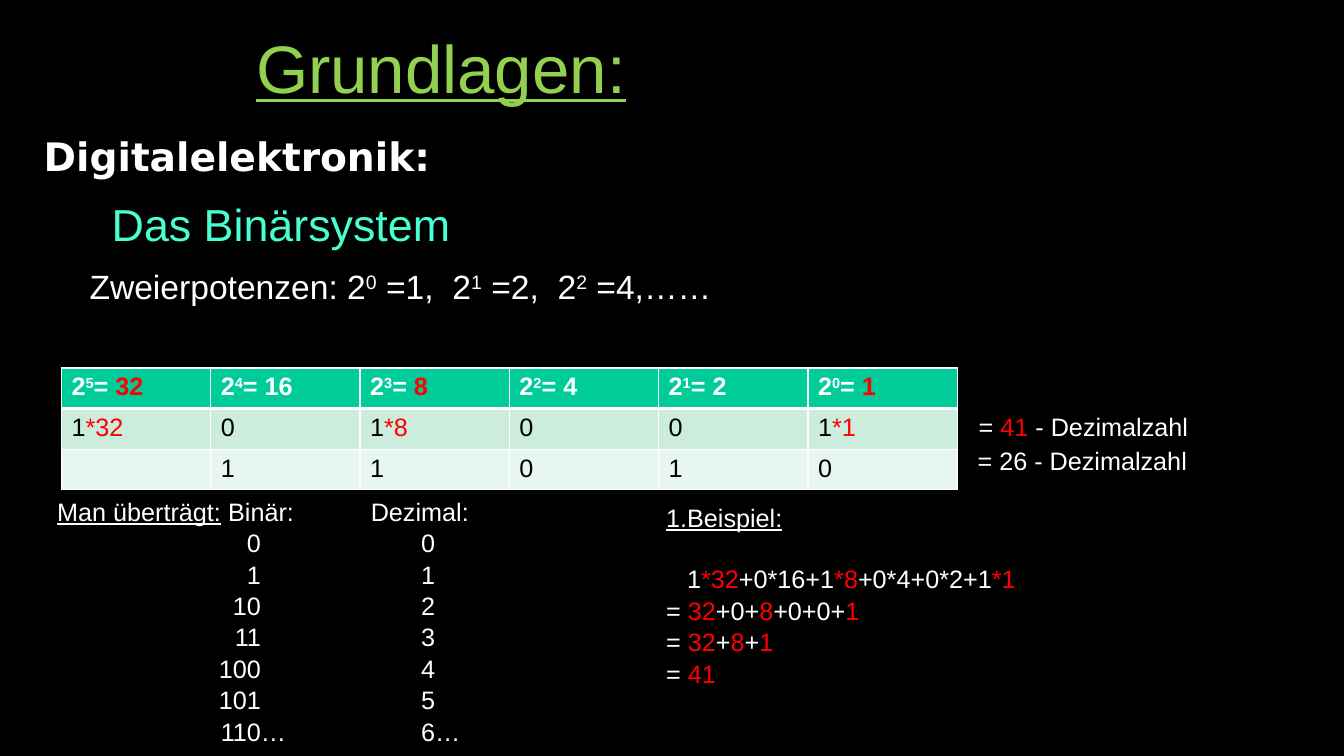
from pptx import Presentation, util as u
from pptx.dml.color import RGBColor
from pptx.enum import text as t
from pptx.oxml import parse_xml
from pptx.oxml.ns import nsdecls

Pt = u.Pt


class Theme:
    font, head = "Arial", "DejaVu Sans"
    back, ink, dark, red = "000000", "FFFFFF", "000000", "FF0000"
    lime, mint = "92D050", "47FFD1"
    fills = ["00CC99", "CCECDE", "E7F6EF"]
    title, topic, sub, powers, body = 48, 28, 32, 24, 18


# Run styles: R red, S superscript, U underlined; a plain string has none.
R, S, U = "R", "S", "U"

TITLE = [("Grundlagen:", U)]
TOPIC = ["Digitalelektronik:"]
SUB = ["Das Binärsystem"]
POWERS = ["Zweierpotenzen: 2", ("0", S), " =1,  2", ("1", S),
          " =2,  2", ("2", S), " =4,……"]
RED_COLS = (0, 2, 5)
BITS = ["100101", "11010"]
BITS = ["101001", " 11010"]
SUMS = [
    (692, 289.4, ["=", (" 41 ", R), "- Dezimalzahl"]),
    (691.2, 313.9, ["= 26 - Dezimalzahl"]),
]
LIST_HEAD = [("Man überträgt:", U), " Binär:\tDezimal:"]
COUNTS = [("0", "0"), ("1", "1"), ("10", "2"), ("11", "3"),
          ("100", "4"), ("101", "5"), ("110…", "6…")]
SAMPLE = [
    [("1.Beispiel:", U)],
    ["1", ("*32", R), "+0*16+1", ("*8", R), "+0*4+0*2+1", ("*1", R)],
    ["= ", ("32", R), "+0+", ("8", R), "+0+0+", ("1", R)],
    ["= ", ("32", R), "+", ("8", R), "+", ("1", R)],
    ["= ", ("41", R)],
]


def rgb(code):
    return RGBColor.from_string(code)


def write(para, runs, size=Theme.body, color=Theme.ink, bold=False,
          font=Theme.font, **form):
    """Fill a paragraph with styled runs; form holds paragraph attributes."""
    for key, val in form.items():
        setattr(para, key, val)
    for item in runs:
        words, style = (item, "") if isinstance(item, str) else item
        run = para.add_run()
        run.text = words
        look = {"name": font, "size": Pt(size), "bold": bold,
                "underline": style == U}
        for key, val in look.items():
            setattr(run.font, key, val)
        run.font.color.rgb = rgb(Theme.red if style == R else color)
        if style == S:
            run.font._element.set("baseline", "30000")


def indent(para, left):
    props = para._p.get_or_add_pPr()
    props.set("marL", str(Pt(left)))
    props.set("indent", "0")


def set_tabs(para, stops):
    """Add tab stops given as (position, alignment) pairs."""
    tabs = "".join(f'<a:tab pos="{Pt(pos)}" algn="{side}"/>'
                   for pos, side in stops)
    para._p.get_or_add_pPr().append(
        parse_xml(f'<a:tabLst {nsdecls("a")}>{tabs}</a:tabLst>'))


def add_box(slide, *place):
    frame = slide.shapes.add_textbox(*map(Pt, place)).text_frame
    frame.word_wrap = True
    return frame


def add_para(frame):
    first = frame.paragraphs[0]
    return frame.add_paragraph() if first.runs else first


def edge(cell, side, width):
    cell._tc.get_or_add_tcPr().append(parse_xml(
        f'<a:{side} {nsdecls("a")} w="{Pt(width)}"><a:solidFill>'
        f'<a:srgbClr val="{Theme.ink}"/></a:solidFill></a:{side}>'))


def add_title(slide):
    title = slide.shapes.title
    place = {"left": 175.7, "top": 20.2, "width": 608.4, "height": 101.5}
    for key, val in place.items():
        setattr(title, key, Pt(val))
    frame = title.text_frame
    frame.vertical_anchor = t.MSO_ANCHOR.TOP
    write(frame.paragraphs[0], TITLE, Theme.title, Theme.lime,
          line_spacing=0.93, alignment=t.PP_ALIGN.LEFT)


def add_intro(slide):
    frame = add_box(slide, 14.4, 89.3, 933.8, 428.4)
    rows = [
        (TOPIC, 9.75, Theme.topic, Theme.ink, Theme.head, 1.06, 14.2),
        (SUB, 58.3, Theme.sub, Theme.mint, Theme.font, 0.98, 11.3),
        (POWERS, 42.5, Theme.powers, Theme.ink, Theme.font, 0.98, 11.3),
    ]
    for runs, left, size, color, font, line, after in rows:
        para = add_para(frame)
        indent(para, left)
        write(para, runs, size, color, font == Theme.head, font,
              line_spacing=line, space_after=Pt(after))


def cell_runs(row, col, power):
    """Runs of one table cell: power of two, weighted bit or plain bit."""
    value = str(2 ** power)
    mark = R if col in RED_COLS else ""
    if row == 0:
        return ["2", (str(power), S), "= ", (value, mark)]
    bit = BITS[row - 1][col].strip()
    if row == 1 and bit == "1":
        return [bit, ("*" + value, R)]
    return [bit] if bit else []


def add_grid(slide):
    count = len(BITS[0])
    table = slide.shapes.add_table(len(BITS) + 1, count, Pt(43.9), Pt(262.8),
                                   Pt(640), Pt(87)).table
    for row, fill in enumerate(Theme.fills):
        table.rows[row].height = Pt(29)
        for col in range(count):
            cell = table.cell(row, col)
            widths = {"lnL": 1, "lnR": 1, "lnT": 3 if row == 1 else 1,
                      "lnB": 3 if row == 0 else 1}
            for side, width in widths.items():
                edge(cell, side, width)
            cell.fill.solid()
            cell.fill.fore_color.rgb = rgb(fill)
            write(cell.text_frame.paragraphs[0],
                  cell_runs(row, col, count - 1 - col),
                  color=Theme.dark if row else Theme.ink, bold=row == 0)


def add_counts(slide):
    frame = add_box(slide, 33.8, 349.9, 848.9, 180)
    para = add_para(frame)
    set_tabs(para, [(224, "l")])
    write(para, LIST_HEAD, line_spacing=1.04)
    for binary, number in COUNTS:
        para = add_para(frame)
        right = 145.5 + Theme.body * binary.count("…")
        set_tabs(para, [(right, "r"), (260, "l")])
        write(para, [f"\t{binary}\t{number}"], line_spacing=1.04)


def add_sample(slide):
    frame = add_box(slide, 468.7, 354.2, 282.2, 138.2)
    for pos, runs in enumerate(SAMPLE):
        para = add_para(frame)
        if pos == 1:
            indent(para, 15)
            para.space_before = Pt(21.5)
        write(para, runs, line_spacing=1.04)


def main():
    deck = Presentation()
    deck.slide_width, deck.slide_height = Pt(960), Pt(540)
    slide = deck.slides.add_slide(deck.slide_layouts[5])
    slide.background.fill.solid()
    slide.background.fill.fore_color.rgb = rgb(Theme.back)
    add_title(slide)
    add_intro(slide)
    add_grid(slide)
    for left, top, runs in SUMS:
        frame = add_box(slide, left, top, 255.6, 28.8)
        write(frame.paragraphs[0], runs, line_spacing=1.04)
    add_counts(slide)
    add_sample(slide)
    deck.save("out.pptx")


if __name__ == "__main__":
    main()
